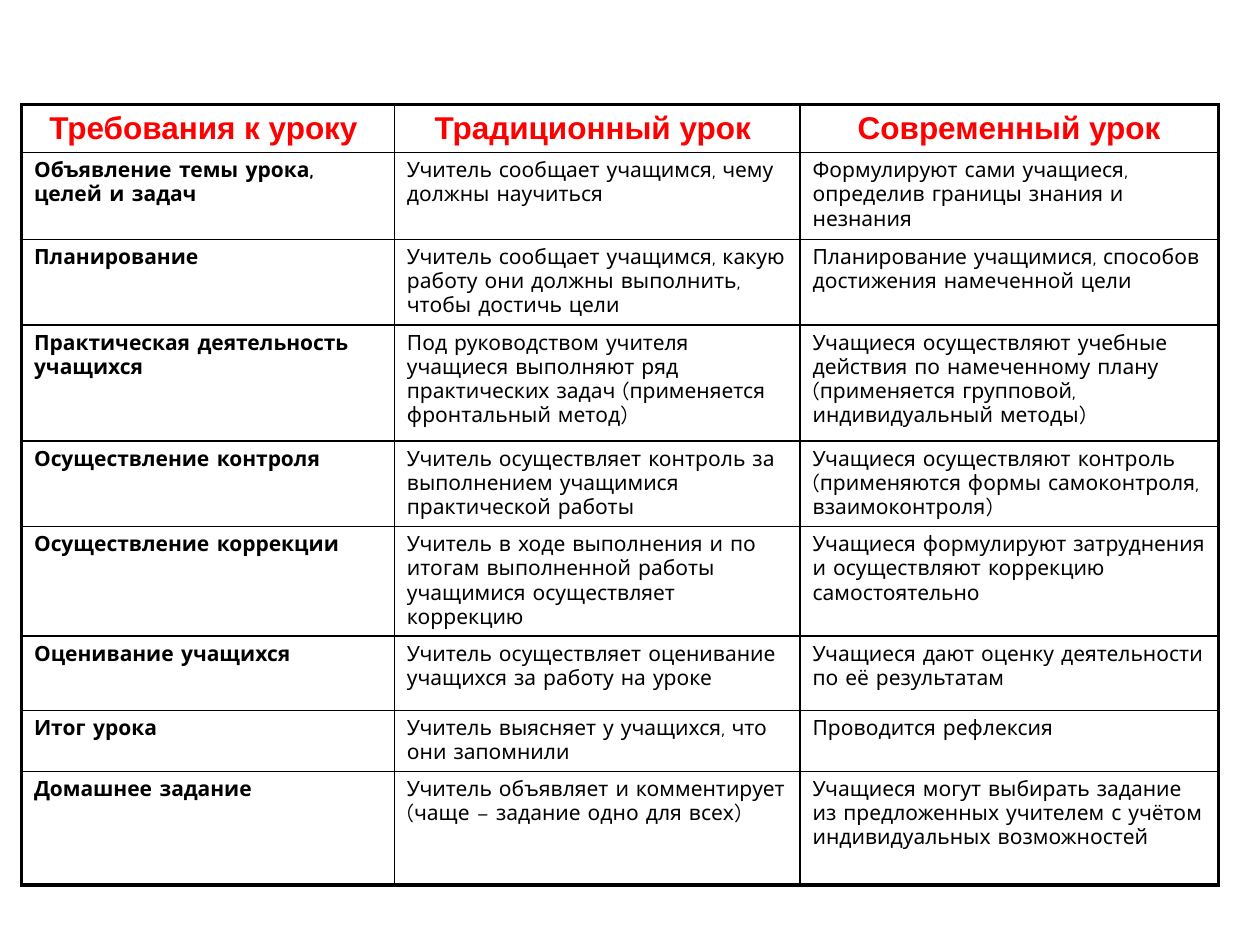
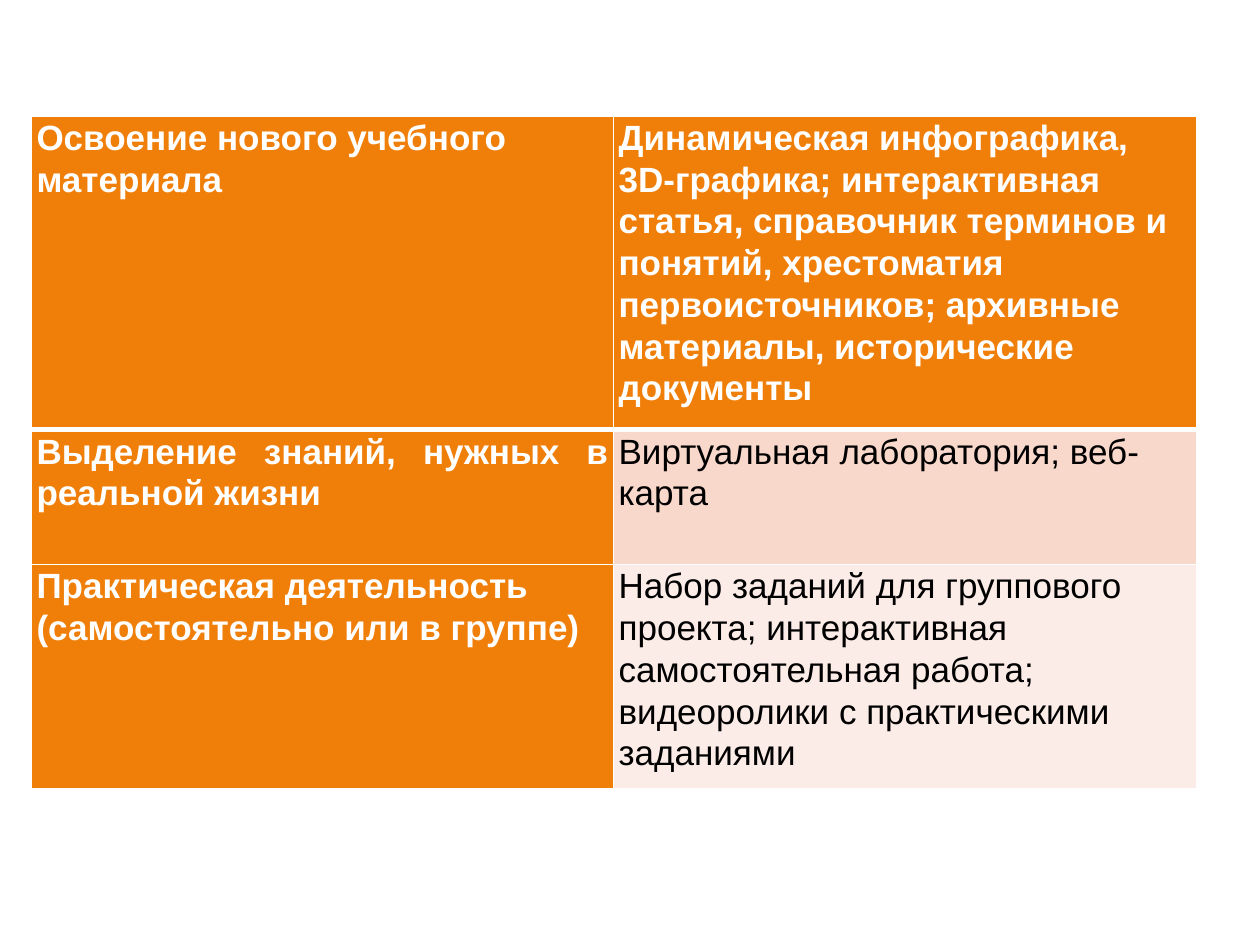
from lxml import etree
from pptx import Presentation
from pptx import util as u
from pptx.dml import color
from pptx.enum import text
from pptx.oxml import ns

BLACK, WHITE, RED, ORANGE = "000000", "FFFFFF", "FF0000", "F07F09"
PINK, PALE_PINK = "F9D8CC", "FCECE7"
LEFT, CENTER, JUSTIFY = text.PP_ALIGN.LEFT, text.PP_ALIGN.CENTER, text.PP_ALIGN.JUSTIFY


def rgb(value):
    return color.RGBColor.from_string(value)


def write(frame, content, size=12, font="Arial", fill=BLACK, bold=False, align=LEFT, spacing=1.0):
    paragraph = frame.paragraphs[0]
    paragraph.alignment = align
    paragraph.line_spacing = spacing
    run = paragraph.add_run()
    run.text = content
    run.font.size = u.Pt(size)
    run.font.name = font
    run.font.bold = bold
    run.font.color.rgb = rgb(fill)


class Deck:
    def __init__(self):
        self.presentation = Presentation()
        self.presentation.slide_width = u.Inches(10)
        self.presentation.slide_height = u.Inches(7.5)
        self.slide = None

    def add_slide(self):
        self.slide = self.presentation.slides.add_slide(self.presentation.slide_layouts[6])

    def add_table(self, left, top, widths, heights):
        frame = self.slide.shapes.add_table(
            len(heights), len(widths), u.Inches(left), u.Inches(top),
            u.Inches(sum(widths)), u.Inches(sum(heights)))
        table = frame.table
        table.first_row = False
        table.horz_banding = False
        for column, width in zip(table.columns, widths):
            column.width = u.Inches(width)
        for row, height in zip(table.rows, heights):
            row.height = u.Inches(height)
        return table

    def fill_cell(self, cell, fill=None):
        if fill:
            cell.fill.solid()
            cell.fill.fore_color.rgb = rgb(fill)
        else:
            cell.fill.background()

    def set_margins(self, cell, side, vertical):
        cell.margin_left = cell.margin_right = u.Inches(side)
        cell.margin_top = cell.margin_bottom = u.Inches(vertical)

    def set_borders(self, cell, line_color, left=1, right=1, top=1, bottom=1):
        properties = cell._tc.get_or_add_tcPr()
        sides = {"a:lnL": left, "a:lnR": right, "a:lnT": top, "a:lnB": bottom}
        for index, (tag, width) in enumerate(sides.items()):
            line = etree.Element(ns.qn(tag), w=str(u.Pt(width)))
            solid = etree.SubElement(line, ns.qn("a:solidFill"))
            etree.SubElement(solid, ns.qn("a:srgbClr"), val=line_color)
            properties.insert(index, line)

    def save(self):
        self.presentation.save("out.pptx")


LESSON_ROWS = [
    ("Требования к уроку ", "Традиционный урок ", "Современный урок"),
    ("Объявление темы урока, целей и задач",
     "Учитель сообщает учащимся, чему должны научиться",
     "Формулируют сами учащиеся, определив границы знания и незнания"),
    ("Планирование",
     "Учитель сообщает учащимся, какую работу они должны выполнить, чтобы достичь цели",
     "Планирование учащимися, способов достижения намеченной цели"),
    ("Практическая деятельность учащихся",
     "Под руководством учителя учащиеся выполняют ряд практических задач "
     "(применяется фронтальный метод)",
     "Учащиеся осуществляют учебные действия по намеченному плану "
     "(применяется групповой, индивидуальный методы)"),
    ("Осуществление контроля",
     "Учитель осуществляет контроль за выполнением учащимися практической работы",
     "Учащиеся осуществляют контроль (применяются формы самоконтроля, взаимоконтроля)"),
    ("Осуществление коррекции",
     "Учитель в ходе выполнения и по итогам выполненной работы учащимися "
     "осуществляет коррекцию",
     "Учащиеся формулируют затруднения и осуществляют коррекцию самостоятельно"),
    ("Оценивание учащихся",
     "Учитель осуществляет оценивание учащихся за работу на уроке",
     "Учащиеся дают оценку деятельности по её результатам"),
    ("Итог урока",
     "Учитель выясняет у учащихся, что они запомнили",
     "Проводится рефлексия"),
    ("Домашнее задание",
     "Учитель объявляет и комментирует (чаще – задание одно для всех)",
     "Учащиеся могут выбирать задание из предложенных учителем с учётом "
     "индивидуальных возможностей"),
]

RESOURCE_ROWS = [
    ("Освоение нового учебного материала",
     "Динамическая инфографика, 3D-графика; интерактивная статья, справочник терминов "
     "и понятий, хрестоматия первоисточников; архивные материалы, исторические документы"),
    ("Выделение знаний, нужных в реальной жизни",
     "Виртуальная лаборатория; веб-карта"),
    ("Практическая деятельность (самостоятельно или в группе)",
     "Набор заданий для группового проекта; интерактивная самостоятельная работа; "
     "видеоролики с практическими заданиями"),
]


def build_lesson_comparison(deck):
    deck.add_slide()
    table = deck.add_table(0.17, 0.83, [2.96, 3.22, 3.32],
                           [0.38, 0.69, 0.68, 0.92, 0.68, 0.87, 0.59, 0.47, 0.9])
    last_row, last_column = len(LESSON_ROWS) - 1, len(LESSON_ROWS[0]) - 1
    for row, contents in enumerate(LESSON_ROWS):
        for column, content in enumerate(contents):
            cell = table.cell(row, column)
            deck.fill_cell(cell)
            deck.set_borders(cell, BLACK,
                             left=2.25 if column == 0 else 1,
                             right=2.25 if column == last_column else 1,
                             top=2.25 if row == 0 else 1,
                             bottom=2.25 if row == last_row else 1)
            if row == 0:
                write(cell.text_frame, content, size=18, fill=RED, bold=True, align=CENTER)
            else:
                write(cell.text_frame, content, font="Comic Neue", bold=column == 0)


def build_lesson_resources(deck):
    deck.add_slide()
    table = deck.add_table(0.25, 0.92, [4.62, 4.63], [2.49, 1.07, 1.78])
    body_fills = [ORANGE, PINK, PALE_PINK]
    for row, contents in enumerate(RESOURCE_ROWS):
        for column, content in enumerate(contents):
            cell = table.cell(row, column)
            heading = row == 0 or column == 0
            deck.fill_cell(cell, ORANGE if heading else body_fills[row])
            deck.set_margins(cell, 0.04, 0)
            deck.set_borders(cell, WHITE, top=3 if row == 1 else 1, bottom=3 if row == 0 else 1)
            write(cell.text_frame, content, size=20, fill=WHITE if heading else BLACK,
                  bold=heading, align=JUSTIFY if (row, column) == (1, 0) else LEFT,
                  spacing=1.07)


def main():
    deck = Deck()
    build_lesson_comparison(deck)
    build_lesson_resources(deck)
    deck.save()


if __name__ == "__main__":
    main()
